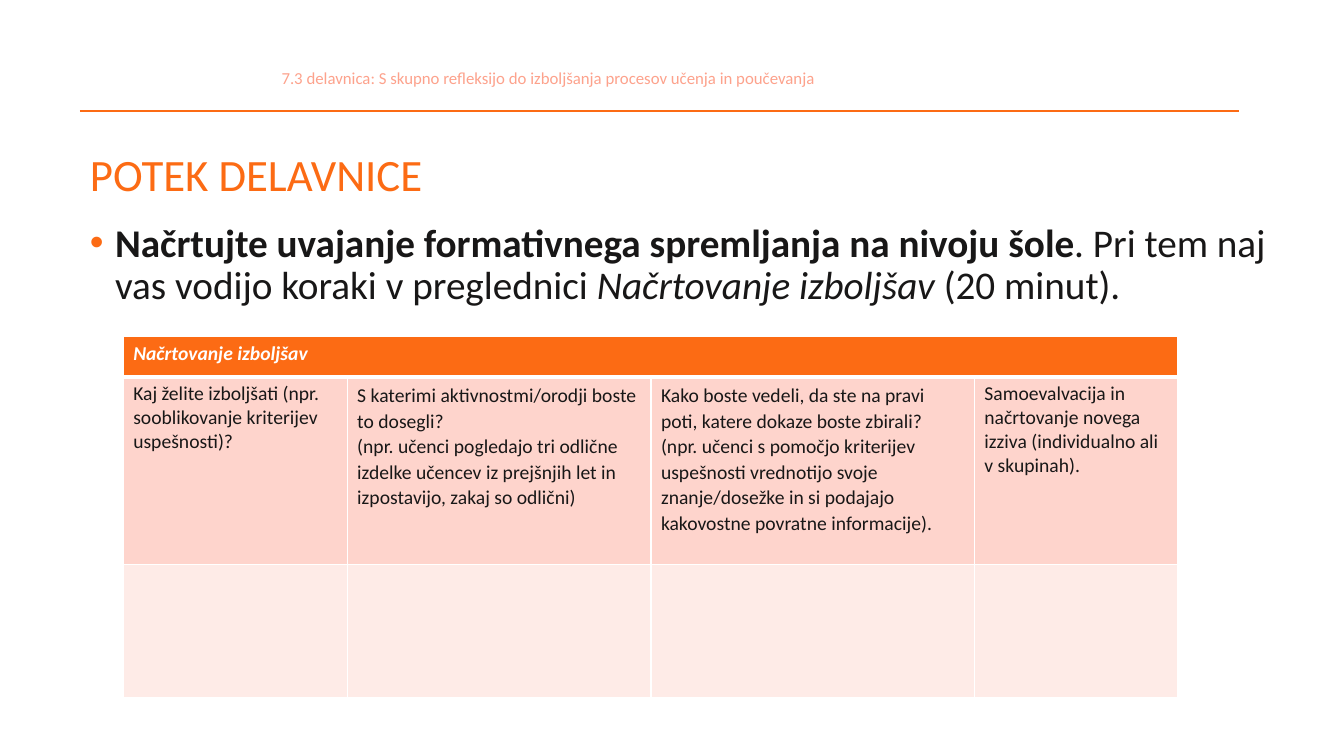
import pptx
import pptx.util
import pptx.dml.color
import pptx.enum.shapes
import pptx.enum.text
import pptx.oxml
import pptx.oxml.ns

Pt = pptx.util.Pt
ANCHOR = pptx.enum.text.MSO_ANCHOR
FONT = "Calibri"
COLORS = {"accent": "FC6B14", "running": "FDA28C", "ink": "181717",
          "white": "FFFFFF", "question": "FED4CC", "answer": "FEEBE7"}

COLUMN_WIDTHS = (160, 217, 231, 145)
ROW_HEIGHTS = (29, 134, 95)
TABLE_TITLE = "Načrtovanje izboljšav"
# Each question: its paragraphs and their line spacing
QUESTIONS = [
    (["Kaj želite izboljšati (npr. sooblikovanje kriterijev uspešnosti)?"], 1),
    (["S katerimi aktivnostmi/orodji boste to dosegli?",
      "(npr. učenci pogledajo tri odlične izdelke učencev iz prejšnjih let in "
      "izpostavijo, zakaj so odlični)"], 1.07),
    (["Kako boste vedeli, da ste na pravi poti, katere dokaze boste zbirali?",
      "(npr. učenci s pomočjo kriterijev uspešnosti vrednotijo svoje "
      "znanje/dosežke in si podajajo kakovostne povratne informacije)."], 1.07),
    (["Samoevalvacija in načrtovanje novega izziva "
      "(individualno ali v skupinah)."], 1),
]


def color(name):
    return pptx.dml.color.RGBColor.from_string(COLORS[name])


def add_xml(parent, tag, content="", attributes=""):
    parent.append(pptx.oxml.parse_xml(
        f'<a:{tag} {pptx.oxml.ns.nsdecls("a")} {attributes}>{content}</a:{tag}>'))


def color_xml(name):
    return f'<a:srgbClr val="{COLORS[name]}"/>'


def format_font(font, size, color_name, bold=False, italic=False):
    font.name, font.size = FONT, Pt(size)
    font.bold, font.italic = bold, italic
    font.color.rgb = color(color_name)


def place(shape, left, top, width, height, anchor):
    shape.left, shape.top = Pt(left), Pt(top)
    shape.width, shape.height = Pt(width), Pt(height)
    frame = shape.text_frame
    frame.word_wrap = True
    frame.auto_size = pptx.enum.text.MSO_AUTO_SIZE.NONE
    frame.vertical_anchor = anchor
    return frame


def add_running_head(page, text):
    rule = page.shapes.add_connector(
        pptx.enum.shapes.MSO_CONNECTOR.STRAIGHT, Pt(57), Pt(79), Pt(885), Pt(79))
    rule.line.color.rgb, rule.line.width = color("accent"), Pt(1.5)
    add_xml(rule._element.spPr, "effectLst")
    box = page.shapes.add_textbox(0, 0, 0, 0)
    frame = place(box, 194, 45.5, 691, 19.5, ANCHOR.MIDDLE)
    frame.text = text
    format_font(frame.paragraphs[0].runs[0].font, 12, "running")


def fill_title(title, text):
    frame = place(title, 57, 103.5, 828, 43.5, ANCHOR.BOTTOM)
    frame.text = text
    para = frame.paragraphs[0]
    para.alignment = pptx.enum.text.PP_ALIGN.LEFT
    para.line_spacing = 0.9
    format_font(para.runs[0].font, 32, "accent")


def fill_task(body, spans):
    para = place(body, 57, 156, 867.5, 343, ANCHOR.TOP).paragraphs[0]
    properties = para._p.get_or_add_pPr()
    properties.set("marL", str(Pt(18)))
    properties.set("indent", str(-Pt(18)))
    add_xml(properties, "buClr", color_xml("accent"))
    add_xml(properties, "buFont", attributes='typeface="Arial"')
    add_xml(properties, "buChar", attributes='char="•"')
    para.line_spacing, para.space_before = 0.9, Pt(0)
    for text, bold, italic in spans:
        span = para.add_run()
        span.text = text
        format_font(span.font, 28, "ink", bold, italic)


def style_cell(cell, fill_name, bottom=1, top=1):
    properties = cell._tc.get_or_add_tcPr()
    for side, width in (("L", 1), ("R", 1), ("T", top), ("B", bottom)):
        add_xml(properties, f"ln{side}",
                f"<a:solidFill>{color_xml('white')}</a:solidFill>",
                f'w="{Pt(width)}"')
    cell.fill.solid()
    cell.fill.fore_color.rgb = color(fill_name)


def write_cell(cell, lines, spacing, color_name, emphasis=False):
    cell.text_frame.text = "\n".join(lines)
    for para in cell.text_frame.paragraphs:
        para.line_spacing = spacing
        format_font(para.runs[0].font, 14, color_name, emphasis, emphasis)


def add_planning_table(page):
    table = page.shapes.add_table(
        len(ROW_HEIGHTS), len(COLUMN_WIDTHS), Pt(88), Pt(240.5),
        Pt(sum(COLUMN_WIDTHS)), Pt(sum(ROW_HEIGHTS))).table
    for column, width in zip(table.columns, COLUMN_WIDTHS):
        column.width = Pt(width)
    for row, height in zip(table.rows, ROW_HEIGHTS):
        row.height = Pt(height)
    for index, (lines, spacing) in enumerate(QUESTIONS):
        style_cell(table.cell(0, index), "accent", bottom=3)
        style_cell(table.cell(1, index), "question", top=3)
        style_cell(table.cell(2, index), "answer")
        write_cell(table.cell(1, index), lines, spacing, "ink")
    heading = table.cell(0, 0)
    heading.merge(table.cell(0, len(COLUMN_WIDTHS) - 1))
    write_cell(heading, [TABLE_TITLE], 1, "white", emphasis=True)


def main():
    deck = pptx.Presentation()
    deck.slide_width, deck.slide_height = Pt(960), Pt(540)
    page = deck.slides.add_slide(deck.slide_layouts[1])

    # Heading and task
    add_running_head(page, "7.3 delavnica: S skupno refleksijo do izboljšanja "
                           "procesov učenja in poučevanja")
    fill_title(page.shapes.title, "POTEK DELAVNICE")
    fill_task(page.placeholders[1], [
        ("Načrtujte uvajanje formativnega spremljanja na nivoju šole", True, False),
        (". Pri tem naj vas vodijo koraki v preglednici ", False, False),
        ("Načrtovanje izboljšav ", False, True),
        ("(20 minut).", False, False)])

    # Planning table
    add_planning_table(page)
    deck.save("out.pptx")


if __name__ == "__main__":
    main()
